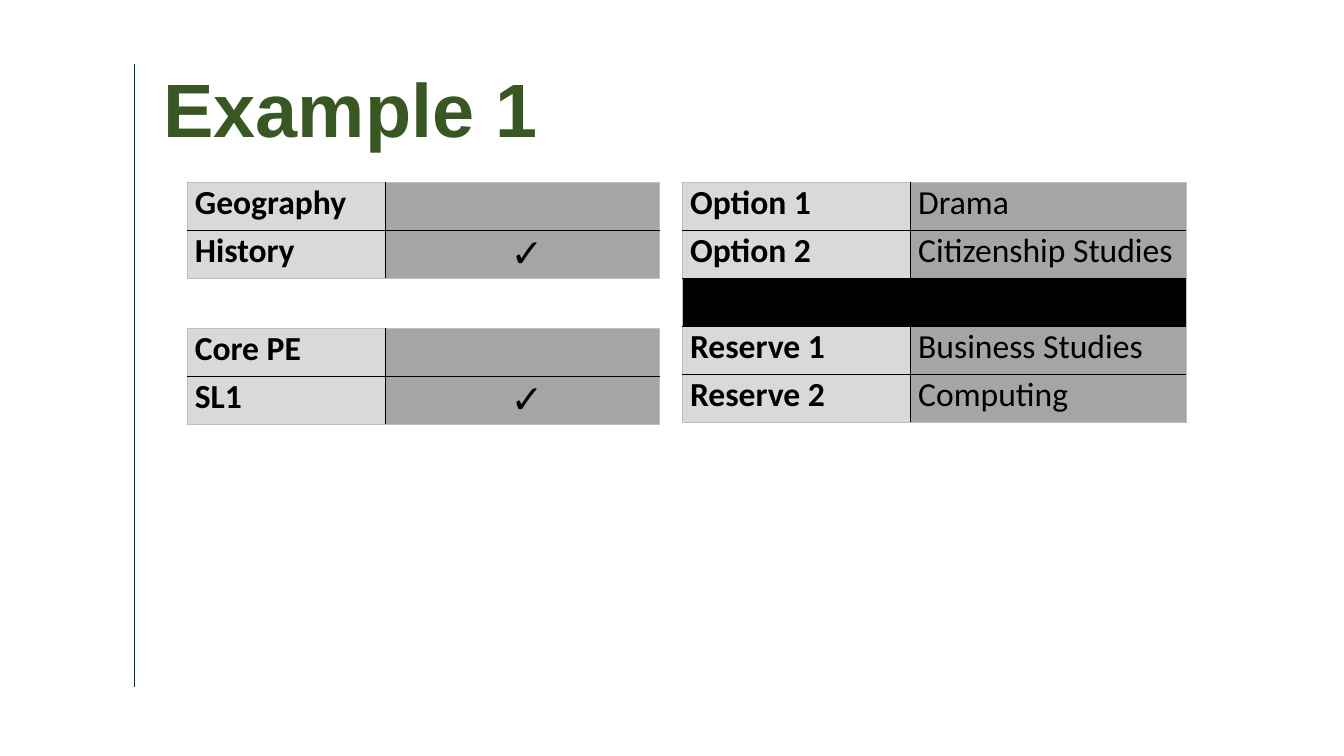
from dataclasses import dataclass

from lxml import etree
from pptx import Presentation
from pptx.dml.color import RGBColor
from pptx.enum.shapes import MSO_CONNECTOR
from pptx.enum.text import MSO_ANCHOR, PP_ALIGN
from pptx.oxml.ns import qn
from pptx.util import Pt

STRAIGHT = MSO_CONNECTOR.STRAIGHT
MIDDLE = MSO_ANCHOR.MIDDLE
LEFT, CENTER = PP_ALIGN.LEFT, PP_ALIGN.CENTER
TITLE_ONLY = 5
TICK = " ✓"
ROW = 34.3


@dataclass(frozen=True)
class Theme:
    rule: str = "003907"
    title: str = "385723"
    ink: str = "000000"
    edge: str = "BFBFBF"
    label: str = "D9D9D9"
    value: str = "A5A5A5"
    head: str = "Arial"
    body: str = "Calibri"
    big: int = 54
    text: int = 24
    tick: int = 28


THEME = Theme()


def style(font, color, **values):
    for name, value in values.items():
        setattr(font, name, value)
    font.color.rgb = RGBColor.from_string(color)


def add_title(slide, text):
    title = slide.shapes.title
    place = dict(left=109.5, top=28.8, width=784.8, height=104.4)
    for name, value in place.items():
        setattr(title, name, Pt(value))
    frame = title.text_frame
    frame.text = text
    frame.vertical_anchor = MIDDLE
    para = frame.paragraphs[0]
    para.alignment = LEFT
    para.line_spacing = 0.9
    style(para.runs[0].font, THEME.title, name=THEME.head,
          size=Pt(THEME.big), bold=True)


def add_rule(slide, x, top, end):
    line = slide.shapes.add_connector(STRAIGHT, Pt(x), Pt(top), Pt(x), Pt(end))
    line.line.color.rgb = RGBColor.from_string(THEME.rule)
    line.line.width = Pt(0.5)
    etree.SubElement(line._element.spPr, qn("a:effectLst"))


def add_edges(cell, outer):
    """Draw the four borders, lighter on the sides flagged as outer."""
    props = cell._tc.get_or_add_tcPr()
    for side, light in zip("LRTB", outer):
        line = etree.SubElement(props, qn(f"a:ln{side}"),
                                w=str(Pt(0.5 if light else 1)))
        fill = etree.SubElement(line, qn("a:solidFill"))
        etree.SubElement(fill, qn("a:srgbClr"),
                         val=THEME.edge if light else THEME.ink)


def fill_cell(cell, text, color, bold):
    cell.margin_left = cell.margin_right = Pt(5.4)
    cell.margin_top = cell.margin_bottom = 0
    cell.fill.solid()
    cell.fill.fore_color.rgb = RGBColor.from_string(color)
    para = cell.text_frame.paragraphs[0]
    if text:
        para.alignment = CENTER if text == TICK else LEFT
        run = para.add_run()
        run.text = text
        size = THEME.tick if text == TICK else THEME.text
        style(run.font, THEME.ink, name=THEME.body, size=Pt(size), bold=bold)


def add_grid(slide, left, top, widths, rows):
    """Add a label and value table; a row without a label is a dark bar."""
    count = len(rows)
    frame = slide.shapes.add_table(count, 2, Pt(left), Pt(top),
                                   Pt(sum(widths)), Pt(ROW * count))
    table = frame.table
    table.first_row = table.horz_banding = False
    for column, width in zip(table.columns, widths):
        column.width = Pt(width)
    for r, texts in enumerate(rows):
        table.rows[r].height = Pt(ROW)
        fills = (THEME.label, THEME.value) if texts[0] else (THEME.ink,) * 2
        for c, text in enumerate(texts):
            cell = table.cell(r, c)
            add_edges(cell, (c == 0, c == 1, r == 0, r == count - 1))
            fill_cell(cell, text, fills[c], bold=c == 0)


def main():
    deck = Presentation()
    deck.slide_width, deck.slide_height = Pt(960), Pt(540)
    slide = deck.slides.add_slide(deck.slide_layouts[TITLE_ONLY])
    add_rule(slide, 96, 45.5, 491)
    add_title(slide, "Example 1")
    narrow, wide = (141.5, 196), (163, 196.8)
    add_grid(slide, 133.8, 130.2, narrow,
             [("Geography", ""), ("History", TICK)])
    add_grid(slide, 133.8, 234.6, narrow,
             [("Core PE", ""), ("SL1", TICK)])
    add_grid(slide, 487.5, 130.2, wide,
             [("Option 1", "Drama"), ("Option 2", "Citizenship Studies"),
              ("", ""),
              ("Reserve 1", "Business Studies"), ("Reserve 2", "Computing")])
    deck.save("out.pptx")


if __name__ == "__main__":
    main()
